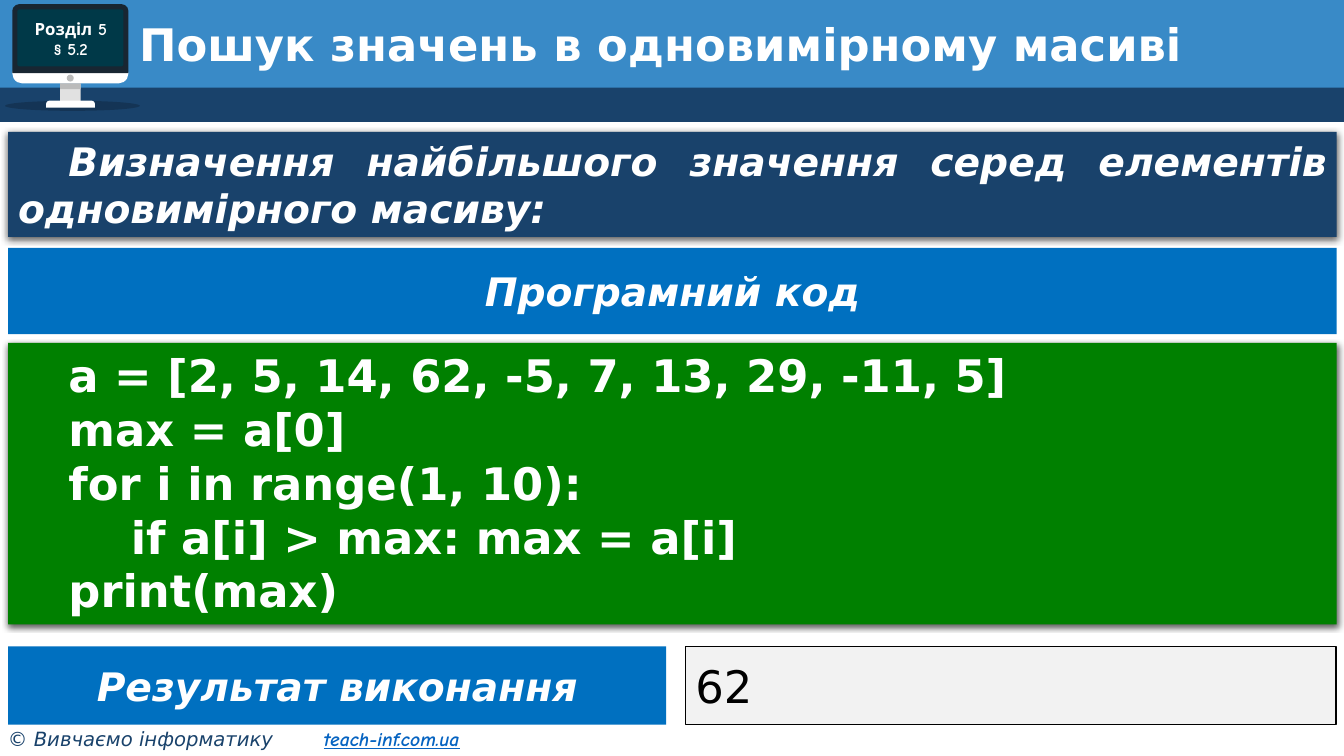
from dataclasses import dataclass, field
from typing import Optional

from lxml import etree
from pptx import Presentation
from pptx import util as u
from pptx.dml import color
from pptx.enum import shapes, text
from pptx.oxml import ns

COLORS = {
    "sky": "398AC7", "navy": "19426B", "blue": "0070C0", "green": "008000",
    "white": "FFFFFF", "black": "000000", "light": "F2F2F2", "link": "0563C1",
    "frame": "182632", "screen": "003948", "stand": "E1E1E1", "grey": "BBBBBB",
}
KIND = shapes.MSO_SHAPE
ALIGN = text.PP_ALIGN
MAIN_FONT = "DejaVu Sans"
HAND_FONT = "Comic Neue"
LEFT, WIDTH = 5.8, 949


@dataclass(frozen=True)
class Box:
    left: float
    top: float
    width: float
    height: float


@dataclass(frozen=True)
class Figure:
    box: Box
    fill: str
    kind: shapes.MSO_SHAPE = KIND.RECTANGLE
    rounding: Optional[float] = None
    alpha: Optional[int] = None
    line: Optional[str] = None
    shadow: bool = False


@dataclass(frozen=True)
class Run:
    words: str
    size: float
    color: str = "white"
    font: str = MAIN_FONT
    bold: bool = False
    italic: bool = False
    underline: bool = False


@dataclass(frozen=True)
class Label:
    box: Box
    lines: list[list[Run]]
    backing: Optional[Figure] = None
    align: text.PP_ALIGN = ALIGN.LEFT
    middle: bool = True
    indent: float = 0
    spacing: float = 1
    tabs: list[float] = field(default_factory=list)


def rgb(name: str) -> color.RGBColor:
    return color.RGBColor.from_string(COLORS[name])


def add_child(parent, tag: str, **attributes):
    values = {key: str(value) for key, value in attributes.items()}
    return etree.SubElement(parent, ns.qn(tag), values)


def add_shadow(shape) -> None:
    effects = shape._element.spPr.find(ns.qn("a:effectLst"))
    outer = add_child(effects, "a:outerShdw", blurRad=u.Pt(4.5), dist=u.Pt(1.5),
                      dir=5400000, algn="t", rotWithShape=0)
    shade = add_child(outer, "a:srgbClr", val=COLORS["black"])
    add_child(shade, "a:alpha", val=63000)


def draw_figure(slide, figure: Figure):
    box = figure.box
    shape = slide.shapes.add_shape(
        figure.kind, u.Pt(box.left), u.Pt(box.top), u.Pt(box.width), u.Pt(box.height))
    shape.shadow.inherit = False
    shape.fill.solid()
    shape.fill.fore_color.rgb = rgb(figure.fill)
    if figure.rounding is not None:
        shape.adjustments[0] = figure.rounding
    if figure.alpha is not None:
        shade = shape._element.spPr.find(".//" + ns.qn("a:srgbClr"))
        add_child(shade, "a:alpha", val=figure.alpha * 1000)
    if figure.line:
        shape.line.color.rgb = rgb(figure.line)
        shape.line.width = u.Pt(1)
    else:
        shape.line.fill.background()
    if figure.shadow:
        add_shadow(shape)
    return shape


def draw_label(slide, label: Label) -> None:
    box = label.box
    if label.backing:
        shape = draw_figure(slide, label.backing)
    else:
        shape = slide.shapes.add_textbox(
            u.Pt(box.left), u.Pt(box.top), u.Pt(box.width), u.Pt(box.height))
    frame = shape.text_frame
    frame.word_wrap = True
    anchors = text.MSO_ANCHOR
    frame.vertical_anchor = anchors.MIDDLE if label.middle else anchors.TOP
    for index, line in enumerate(label.lines):
        paragraph = frame.paragraphs[0] if index == 0 else frame.add_paragraph()
        paragraph.alignment = label.align
        paragraph.line_spacing = label.spacing
        properties = paragraph._p.get_or_add_pPr()
        if label.indent:
            properties.set("indent", str(u.Pt(label.indent)))
        if label.tabs:
            stops = add_child(properties, "a:tabLst")
            for position in label.tabs:
                add_child(stops, "a:tab", pos=u.Pt(position), algn="l")
        for item in line:
            run = paragraph.add_run()
            run.text = item.words
            font = run.font
            font.name = item.font
            font.size = u.Pt(item.size)
            font.bold = item.bold
            font.italic = item.italic
            font.underline = item.underline
            font.color.rgb = rgb(item.color)


def panel(box: Box, fill: str, lines: list[list[Run]], line: Optional[str] = None,
          shadow: bool = False, **options) -> Label:
    return Label(box, lines, Figure(box, fill, line=line, shadow=shadow), **options)


def heading(words: str) -> list[list[Run]]:
    return [[Run(words, 28, bold=True, italic=True)]]


HEADER_AND_MONITOR = [
    Figure(Box(0, 0, 960, 65.5), "sky"),
    Figure(Box(0, 62.7, 960, 24.5), "navy"),
    Figure(Box(3.6, 72, 96.3, 7.2), "black", KIND.OVAL, alpha=20),
    Figure(Box(8.8, 45.2, 83, 14.4), "white", KIND.ROUNDED_RECTANGLE, 0.5),
    Figure(Box(8.8, 3, 83, 49.2), "frame", KIND.ROUND_2_SAME_RECTANGLE, 0.1),
    Figure(Box(42.9, 59.6, 14.8, 12.4), "stand"),
    Figure(Box(42.9, 59.6, 14.8, 4), "grey"),
    Figure(Box(32.9, 71.9, 34.9, 5), "white", KIND.ROUND_2_SAME_RECTANGLE, 0.5),
    Figure(Box(47.7, 53.3, 5, 5), "grey", KIND.OVAL),
    Figure(Box(12.4, 6.7, 75.8, 40.8), "screen", KIND.ROUNDED_RECTANGLE, 0.04),
]

CODE = [
    "a = [2, 5, 14, 62, -5, 7, 13, 29, -11, 5]",
    "max = a[0]",
    "for i in range(1, 10):",
    "    if a[i] > max: max = a[i]",
    "print(max)",
]

LABELS = [
    Label(Box(-1.4, 515.5, 376.6, 24.2),
          [[Run("© Вивчаємо інформатику\t", 14, "navy", italic=True),
            Run("teach-inf.com.ua", 14, "link", HAND_FONT, True, True, True)]],
          middle=False, tabs=[225.4]),
    Label(Box(9.2, 6.5, 83, 42.5),
          [[Run(words, 12, font=HAND_FONT, bold=True)] for words in ("Розділ 5", "§ 5.2")],
          align=ALIGN.CENTER),
    panel(Box(LEFT, 94.2, WIDTH, 75.1), "navy",
          heading("Визначення найбільшого значення серед елементів одновимірного масиву:"),
          shadow=True, align=ALIGN.JUSTIFY, middle=False, indent=36),
    Label(Box(92.3, 12.8, 844, 41.8),
          [[Run("Пошук значень в одновимірному масиві", 32, bold=True)]], spacing=0.9),
    panel(Box(LEFT, 245, WIDTH, 201), "green",
          [[Run(words, 32, bold=True)] for words in CODE],
          shadow=True, align=ALIGN.JUSTIFY, middle=False, indent=36),
    panel(Box(489.6, 461.7, 464.7, 56), "light", [[Run("62", 32, "black")]], line="black"),
    panel(Box(LEFT, 177.1, WIDTH, 61.6), "blue", heading("Програмний код"),
          align=ALIGN.CENTER),
    panel(Box(LEFT, 461.7, 470, 56), "blue", heading("Результат виконання"),
          align=ALIGN.CENTER),
]


def main() -> None:
    presentation = Presentation()
    presentation.slide_width = u.Pt(960)
    presentation.slide_height = u.Pt(540)
    slide = presentation.slides.add_slide(presentation.slide_layouts[6])
    for figure in HEADER_AND_MONITOR:
        draw_figure(slide, figure)
    for label in LABELS:
        draw_label(slide, label)
    presentation.save("out.pptx")


if __name__ == "__main__":
    main()
